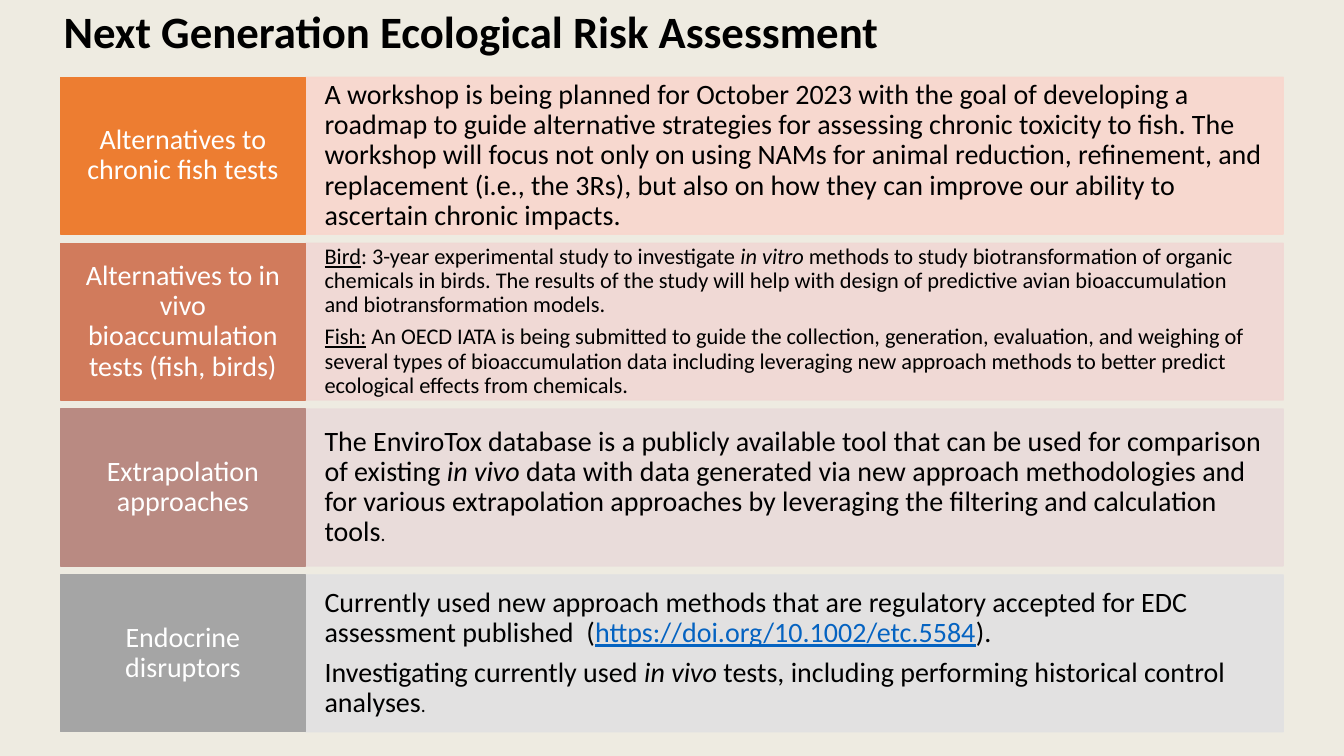
"""Build the Next Generation Ecological Risk Assessment slide."""
from dataclasses import dataclass

from lxml.etree import SubElement
from pptx import Presentation
from pptx.dml.color import RGBColor
from pptx.enum.shapes import MSO_SHAPE as Preset
from pptx.enum.text import MSO_ANCHOR as Anchor, MSO_AUTO_SIZE as AutoSize, PP_ALIGN as Align
from pptx.oxml.ns import qn
from pptx.shapes.autoshape import Shape
from pptx.slide import Slide
from pptx.text.text import TextFrame
from pptx.util import Cm, Pt

FONT = "Calibri"
BLACK = RGBColor(0x00, 0x00, 0x00)
WHITE = RGBColor(0xFF, 0xFF, 0xFF)
LINK_BLUE = RGBColor(0x05, 0x63, 0xC1)
PAPER = RGBColor(0xEE, 0xEB, 0xE1)
ORANGE = RGBColor(0xED, 0x7D, 0x31)
ORANGE_TINT = RGBColor(0xF8, 0xD7, 0xCE)
TERRACOTTA = RGBColor(0xD1, 0x7B, 0x5C)
TERRACOTTA_TINT = RGBColor(0xF1, 0xD8, 0xD4)
MAUVE = RGBColor(0xB9, 0x8A, 0x82)
MAUVE_TINT = RGBColor(0xE9, 0xDB, 0xDA)
GREY = RGBColor(0xA5, 0xA5, 0xA5)
GREY_TINT = RGBColor(0xE1, 0xE1, 0xE1)

TOPIC_LEFT, TOPIC_WIDTH = 1.52, 6.18
DETAIL_LEFT, DETAIL_WIDTH = TOPIC_LEFT + TOPIC_WIDTH, 24.64
FIRST_TOP, ROW_HEIGHT, ROW_PITCH = 1.95, 3.95, 4.18
LINE_SPACING = 0.9
PARAGRAPH_GAP = 0.35
DETAIL_OPACITY = 90


@dataclass(frozen=True)
class Span:
    """A stretch of text in one style."""
    text: str
    italic: bool = False
    underline: bool = False
    size: float | None = None
    color: RGBColor | None = None


Paragraphs = list[list[Span]]


@dataclass(frozen=True)
class Row:
    """A topic with its details."""
    topic: str
    fill: RGBColor
    tint: RGBColor
    details: Paragraphs
    size: float = 20


ROWS = [
    Row("Alternatives to chronic fish tests", ORANGE, ORANGE_TINT, [
        [Span("A workshop is being planned for October 2023 with the goal of developing a "
              "roadmap to guide alternative strategies for assessing chronic toxicity to fish. "
              "The workshop will focus not only on using NAMs for animal reduction, refinement, "
              "and replacement (i.e., the 3Rs), but also on how they can improve our ability to "
              "ascertain chronic impacts.")],
    ]),
    Row("Alternatives to in vivo bioaccumulation tests (fish, birds)", TERRACOTTA, TERRACOTTA_TINT, [
        [Span("Bird", underline=True),
         Span(": 3-year experimental study to investigate "),
         Span("in vitro", italic=True),
         Span(" methods to study biotransformation of organic chemicals in birds. The results of "
              "the study will help with design of predictive avian bioaccumulation and "
              "biotransformation models.")],
        [Span("Fish:", underline=True),
         Span(" An OECD IATA is being submitted to guide the collection, generation, evaluation, "
              "and weighing of several types of bioaccumulation data including leveraging new "
              "approach methods to better predict ecological effects from chemicals.")],
    ], size=16),
    Row("Extrapolation approaches", MAUVE, MAUVE_TINT, [
        [Span("The EnviroTox database is a publicly available tool that can be used for "
              "comparison of existing "),
         Span("in vivo", italic=True),
         Span(" data with data generated via new approach methodologies and for various "
              "extrapolation approaches by leveraging the filtering and calculation tools"),
         Span(".", size=14)],
    ]),
    Row("Endocrine disruptors", GREY, GREY_TINT, [
        [Span("Currently used new approach methods that are regulatory accepted for EDC "
              "assessment published  ("),
         Span("https://doi.org/10.1002/etc.5584", underline=True, color=LINK_BLUE),
         Span(").")],
        [Span("Investigating currently used "),
         Span("in vivo", italic=True),
         Span(" tests, including performing historical control analyses"),
         Span(".", size=14)],
    ]),
]


def write(frame: TextFrame, paragraphs: Paragraphs, size: float, color: RGBColor,
          align: Align, bold: bool = False) -> None:
    """Write styled paragraphs into a vertically centred frame."""
    frame.word_wrap = True
    frame.auto_size = AutoSize.NONE
    frame.vertical_anchor = Anchor.MIDDLE
    for index, spans in enumerate(paragraphs):
        paragraph = frame.add_paragraph() if index else frame.paragraphs[0]
        paragraph.alignment = align
        paragraph.line_spacing = LINE_SPACING
        paragraph.space_before = Pt(size * PARAGRAPH_GAP if index else 0)
        for span in spans:
            run = paragraph.add_run()
            run.text = span.text
            font = run.font
            font.name = FONT
            font.size = Pt(span.size or size)
            font.bold = bold
            font.italic = span.italic
            font.underline = span.underline
            font.color.rgb = span.color or color


def add_panel(slide: Slide, left: float, top: float, width: float, color: RGBColor,
              side_inset: float, opacity: int = 100) -> Shape:
    """Add one coloured rectangle of a row."""
    panel = slide.shapes.add_shape(Preset.RECTANGLE, Cm(left), Cm(top), Cm(width), Cm(ROW_HEIGHT))
    panel.shadow.inherit = False
    panel.fill.solid()
    panel.fill.fore_color.rgb = color
    panel.line.color.rgb = color
    panel.line.width = Pt(1)
    if opacity < 100:
        for tone in panel.element.spPr.iter(qn("a:srgbClr")):
            SubElement(tone, qn("a:alpha")).set("val", str(opacity * 1000))
    frame = panel.text_frame
    frame.margin_left = frame.margin_right = Cm(side_inset)
    frame.margin_top = frame.margin_bottom = 0
    return panel


def add_row(slide: Slide, row: Row, top: float) -> None:
    """Add the details panel and the topic panel of a row."""
    details = add_panel(slide, DETAIL_LEFT, top, DETAIL_WIDTH, row.tint, 0.48, DETAIL_OPACITY)
    write(details.text_frame, row.details, row.size, BLACK, Align.LEFT)
    topic = add_panel(slide, TOPIC_LEFT, top, TOPIC_WIDTH, row.fill, 0.34)
    write(topic.text_frame, [[Span(row.topic)]], 20, WHITE, Align.CENTER)


def add_title(slide: Slide, text: str) -> None:
    """Place and format the slide title."""
    title = slide.shapes.title
    title.left, title.top, title.width, title.height = Cm(1.35), Cm(0.41), Cm(30.81), Cm(0.89)
    write(title.text_frame, [[Span(text)]], 32, BLACK, Align.LEFT, bold=True)


def main() -> None:
    """Build and save the slide."""
    deck = Presentation()
    deck.slide_width, deck.slide_height = Cm(33.87), Cm(19.05)
    slide = deck.slides.add_slide(deck.slide_layouts.get_by_name("Title Only"))
    slide.background.fill.solid()
    slide.background.fill.fore_color.rgb = PAPER
    add_title(slide, "Next Generation Ecological Risk Assessment")
    for index, row in enumerate(ROWS):
        add_row(slide, row, FIRST_TOP + index * ROW_PITCH)
    deck.save("out.pptx")


if __name__ == "__main__":
    main()
